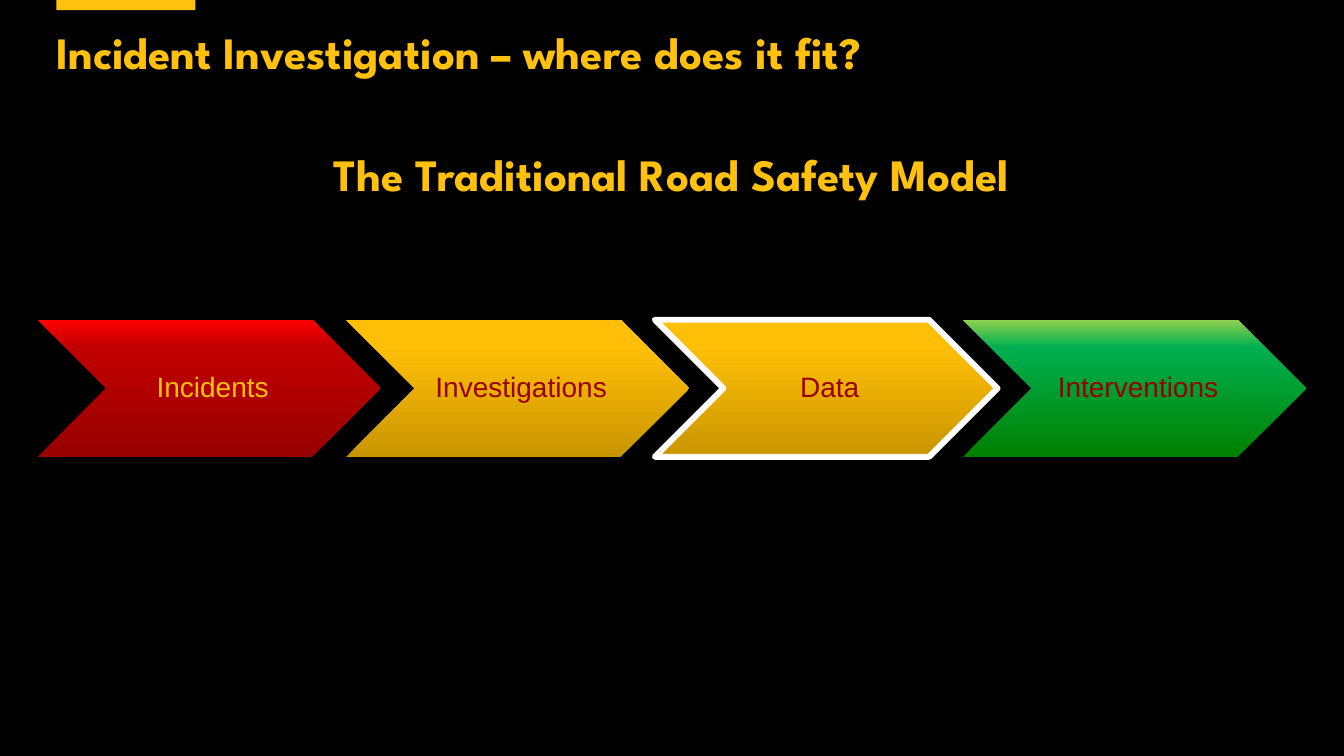
from copy import deepcopy
from dataclasses import dataclass

from lxml import etree
from pptx import Presentation
from pptx.dml.color import RGBColor
from pptx.enum.shapes import MSO_SHAPE
from pptx.enum.text import MSO_ANCHOR, MSO_AUTO_SIZE, PP_ALIGN
from pptx.oxml.ns import qn
from pptx.util import Inches, Pt

CHEVRON, RECTANGLE = MSO_SHAPE.CHEVRON, MSO_SHAPE.RECTANGLE
LEFT, CENTER = PP_ALIGN.LEFT, PP_ALIGN.CENTER
MIDDLE, BOTTOM = MSO_ANCHOR.MIDDLE, MSO_ANCHOR.BOTTOM
TITLE_ONLY = 5


@dataclass(frozen=True)
class Theme:
    background: str = "000000"
    accent: str = "FFC10E"
    dark_red: str = "990000"
    outline: str = "FFFFFF"
    # Gradient colours run from the bottom edge to the top edge
    red: tuple = ("990000", "C00000", "FF0000")
    amber: tuple = ("C99500", "FFBF06", "FFBF07")
    green: tuple = ("008000", "00B050", "92D050")
    gradient_positions: tuple = (0, 0.8, 1)
    heading_font: str = "League Spartan"
    body_font: str = "Arial"
    heading_size: int = 32
    label_size: int = 20
    outline_width: float = 4.25
    line_spacing: float = 0.9


class SlideBuilder:
    """Places styled elements; lengths are percentages of the slide's size."""

    def __init__(self, presentation, theme):
        self.theme = theme
        self.width = presentation.slide_width
        self.height = presentation.slide_height
        self.slide = presentation.slides.add_slide(
            presentation.slide_layouts[TITLE_ONLY])
        background = self.slide.background.fill
        background.solid()
        background.fore_color.rgb = RGBColor.from_string(theme.background)

    def box(self, left, top, width, height):
        return (round(self.width * left / 100), round(self.height * top / 100),
                round(self.width * width / 100), round(self.height * height / 100))

    def set_text(self, shape, text, font, size, color, bold, align, anchor, margins):
        frame = shape.text_frame
        frame.text = text
        frame.word_wrap = True
        frame.auto_size = MSO_AUTO_SIZE.NONE
        frame.vertical_anchor = anchor
        (frame.margin_left, frame.margin_top,
         frame.margin_right, frame.margin_bottom) = map(Inches, margins)
        paragraph = frame.paragraphs[0]
        paragraph.alignment = align
        paragraph.line_spacing = self.theme.line_spacing
        paragraph.space_before = Pt(0)
        run_font = paragraph.runs[0].font
        run_font.name, run_font.size, run_font.bold = font, Pt(size), bold
        run_font.color.rgb = RGBColor.from_string(color)

    def heading(self, shape, text, align):
        self.set_text(shape, text, self.theme.heading_font, self.theme.heading_size,
                      self.theme.accent, True, align, BOTTOM, (0, 0, 0, 0))

    def title(self, text, *area):
        shape = self.slide.shapes.title
        shape.left, shape.top, shape.width, shape.height = self.box(*area)
        self.heading(shape, text, LEFT)

    def subtitle(self, text, *area):
        shape = self.slide.shapes.add_textbox(*self.box(*area))
        self.heading(shape, text, CENTER)

    def bar(self, *area):
        shape = self.slide.shapes.add_shape(RECTANGLE, *self.box(*area))
        shape.shadow.inherit = False
        shape.fill.solid()
        shape.fill.fore_color.rgb = RGBColor.from_string(self.theme.accent)
        shape.line.fill.background()

    def gradient(self, shape, colors):
        fill = shape.fill
        fill.gradient()
        fill.gradient_angle = 90
        stop_list = shape.element.spPr.find(".//" + qn("a:gsLst"))
        stop_list.append(deepcopy(stop_list[-1]))
        for stop, color, position in zip(fill.gradient_stops, colors,
                                         self.theme.gradient_positions):
            stop.color.rgb = RGBColor.from_string(color)
            stop.position = position

    def chevron(self, text, colors, text_color, outlined, *area):
        shape = self.slide.shapes.add_shape(CHEVRON, *self.box(*area))
        shape.shadow.inherit = False
        self.gradient(shape, colors)
        if outlined:
            shape.line.color.rgb = RGBColor.from_string(self.theme.outline)
            shape.line.width = Pt(self.theme.outline_width)
            etree.SubElement(shape.element.spPr.find(qn("a:ln")), qn("a:round"))
        else:
            shape.line.fill.background()
        self.set_text(shape, text, self.theme.body_font, self.theme.label_size,
                      text_color, False, CENTER, MIDDLE, (0.1, 0.03, 0.03, 0.03))


def main():
    presentation = Presentation()
    presentation.slide_width, presentation.slide_height = Inches(13.33), Inches(7.5)
    theme = Theme()
    builder = SlideBuilder(presentation, theme)

    # Headings
    builder.bar(4.2, 0, 10.35, 1.35)
    builder.title("Incident Investigation – where does it fit?", 4.2, 3.6, 91.45, 6.93)
    builder.subtitle("The Traditional Road Safety Model", 0, 20.27, 100, 6.4)

    # Process chain, centred, each step overlapping the last by a tenth
    steps = (
        ("Incidents", theme.red, theme.accent, False),
        ("Investigations", theme.amber, theme.dark_red, False),
        ("Data", theme.amber, theme.dark_red, True),
        ("Interventions", theme.green, theme.dark_red, False),
    )
    step_width = 25.5
    pitch = step_width * 0.9
    chain_left = (100 - step_width - pitch * (len(steps) - 1)) / 2
    for index, step in enumerate(steps):
        builder.chevron(*step, chain_left + index * pitch, 42.3, step_width, 18.13)

    presentation.save("out.pptx")


if __name__ == "__main__":
    main()
